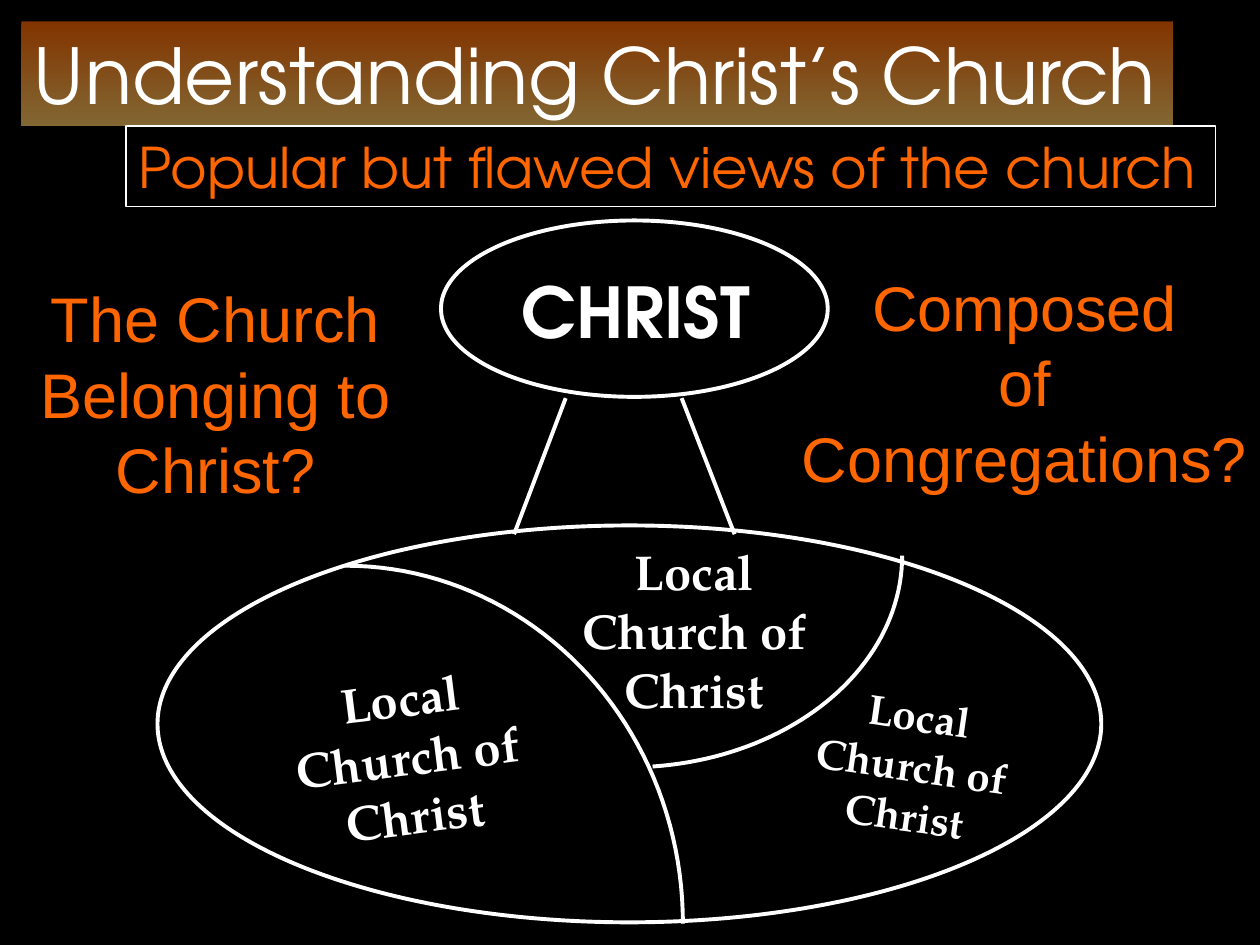
"""Build the slide on popular but flawed views of the church."""
from math import cos, radians, sin

from pptx import Presentation, util as u
from pptx.dml.color import RGBColor
from pptx.enum import shapes as kinds, text as t
from pptx.oxml.ns import qn
from pptx.oxml.xmlchemy import OxmlElement

BLACK = RGBColor(0x00, 0x00, 0x00)
WHITE = RGBColor(0xFF, 0xFF, 0xFF)
ORANGE = RGBColor(0xFF, 0x66, 0x00)
SAND = RGBColor(0xFF, 0xCC, 0x66)
SANS, SERIF, PLAIN = "TeX Gyre Adventor", "TeX Gyre Pagella", "Arial"

TITLE = ("Understanding Christ’s Church", (0.17, 0.17, 9.14, 0.83), 44, WHITE)
SUBTITLE = ("Popular but flawed views of the church", (1, 1, 8.65, 0.64), 32, ORANGE)
CHURCH = {"name": SERIF, "bold": True}
LABELS = [
    (["CHRIST"], (3.42, 2.08, 3.25, 0.77), 0, 40, WHITE, {"name": SANS, "bold": True}),
    (["Local", "Church of Christ"], (4.25, 4.25, 2.52, 1.5), 0, 28, WHITE, CHURCH),
    (["Local Church of Christ"], (2.08, 5.25, 2.31, 1.5), -7.2, 28, WHITE, CHURCH),
    (["Local Church of Christ"], (6.25, 5.42, 1.98, 1.3), 8.4, 24, WHITE, CHURCH),
    (["The Church Belonging to Christ?"], (0.17, 2.17, 3.08, 1.9), 0, 36, ORANGE,
     {"name": PLAIN}),
    (["Composed", "of Congregations?"], (6.17, 2.08, 3.92, 1.9), 0, 36, ORANGE,
     {"name": PLAIN}),
]
OVALS = [(3.5, 1.75, 3.07, 1.4), (1.25, 4.17, 7.49, 3.15)]
LINKS = [(4.49, 3.16, 4.08, 4.24), (5.41, 3.16, 5.83, 4.24)]
DIVIDERS = [
    {"centre": (2.74, 7.33), "radii": (2.68, 2.84), "sweep": (-90, 0)},
    {"centre": (4.99, 4.41), "radii": (2.17, 1.68), "sweep": (0, 85)},
]
ARC_STEPS = 45


def inches(values):
    return [u.Inches(value) for value in values]


def outline(part, points):
    part.line.color.rgb = WHITE
    part.line.width = u.Pt(points)


def write(part, paragraphs, size, color, style, wrap=True, align=t.PP_ALIGN.CENTER):
    frame = part.text_frame
    frame.text = "\n".join(paragraphs)
    layout = {"word_wrap": wrap, "vertical_anchor": t.MSO_ANCHOR.TOP,
              "auto_size": t.MSO_AUTO_SIZE.SHAPE_TO_FIT_TEXT}
    for key, value in layout.items():
        setattr(frame, key, value)
    for paragraph in frame.paragraphs:
        paragraph.alignment = align
        font = paragraph.runs[0].font
        font.color.rgb = color
        for key, value in {"size": u.Pt(size), **style}.items():
            setattr(font, key, value)


def add_plain_shape(slide, kind, box):
    part = slide.shapes.add_shape(kind, *inches(box))
    part.shadow.inherit = False
    part.fill.background()
    part.line.fill.background()
    return part


def add_heading(slide, words, box, size, color):
    heading = add_plain_shape(slide, kinds.MSO_SHAPE.RECTANGLE, box)
    write(heading, [words], size, color, {"name": SANS}, False, t.PP_ALIGN.LEFT)
    return heading


def shade(banner):
    banner.fill.gradient()
    banner.fill.gradient_angle = 270
    for stop, color, place in zip(banner.fill.gradient_stops, (ORANGE, SAND), (0, 1)):
        stop.color.rgb = color
        stop.position = place
    for tint in banner._element.spPr.find(qn("a:gradFill")).iter(qn("a:srgbClr")):
        alpha = OxmlElement("a:alpha")
        alpha.set("val", "51000")
        tint.append(alpha)


def add_divider(slide, centre, radii, sweep):
    first, last = sweep
    angles = [radians(first + (last - first) * step / ARC_STEPS)
              for step in range(ARC_STEPS + 1)]
    points = [inches((centre[0] + radii[0] * cos(angle),
                      centre[1] + radii[1] * sin(angle))) for angle in angles]
    builder = slide.shapes.build_freeform(*points[0])
    builder.add_line_segments(points[1:], close=False)
    divider = builder.convert_to_shape()
    divider.shadow.inherit = False
    divider.fill.background()
    outline(divider, 2.25)


def main():
    deck = Presentation()
    deck.slide_width, deck.slide_height = inches((10, 7.5))
    slide = deck.slides.add_slide(deck.slide_layouts[6])
    slide.background.fill.solid()
    slide.background.fill.fore_color.rgb = BLACK

    shade(add_heading(slide, *TITLE))
    outline(add_heading(slide, *SUBTITLE), 0.75)
    for box in OVALS:
        outline(add_plain_shape(slide, kinds.MSO_SHAPE.OVAL, box), 2.25)
    for ends in LINKS:
        link = slide.shapes.add_connector(kinds.MSO_CONNECTOR.STRAIGHT, *inches(ends))
        outline(link, 2.25)
        link._element.spPr.append(OxmlElement("a:effectLst"))
    for divider in DIVIDERS:
        add_divider(slide, **divider)
    for paragraphs, box, turn, size, color, style in LABELS:
        label = slide.shapes.add_textbox(*inches(box))
        label.rotation = turn
        write(label, paragraphs, size, color, style)

    deck.save("out.pptx")


if __name__ == "__main__":
    main()
